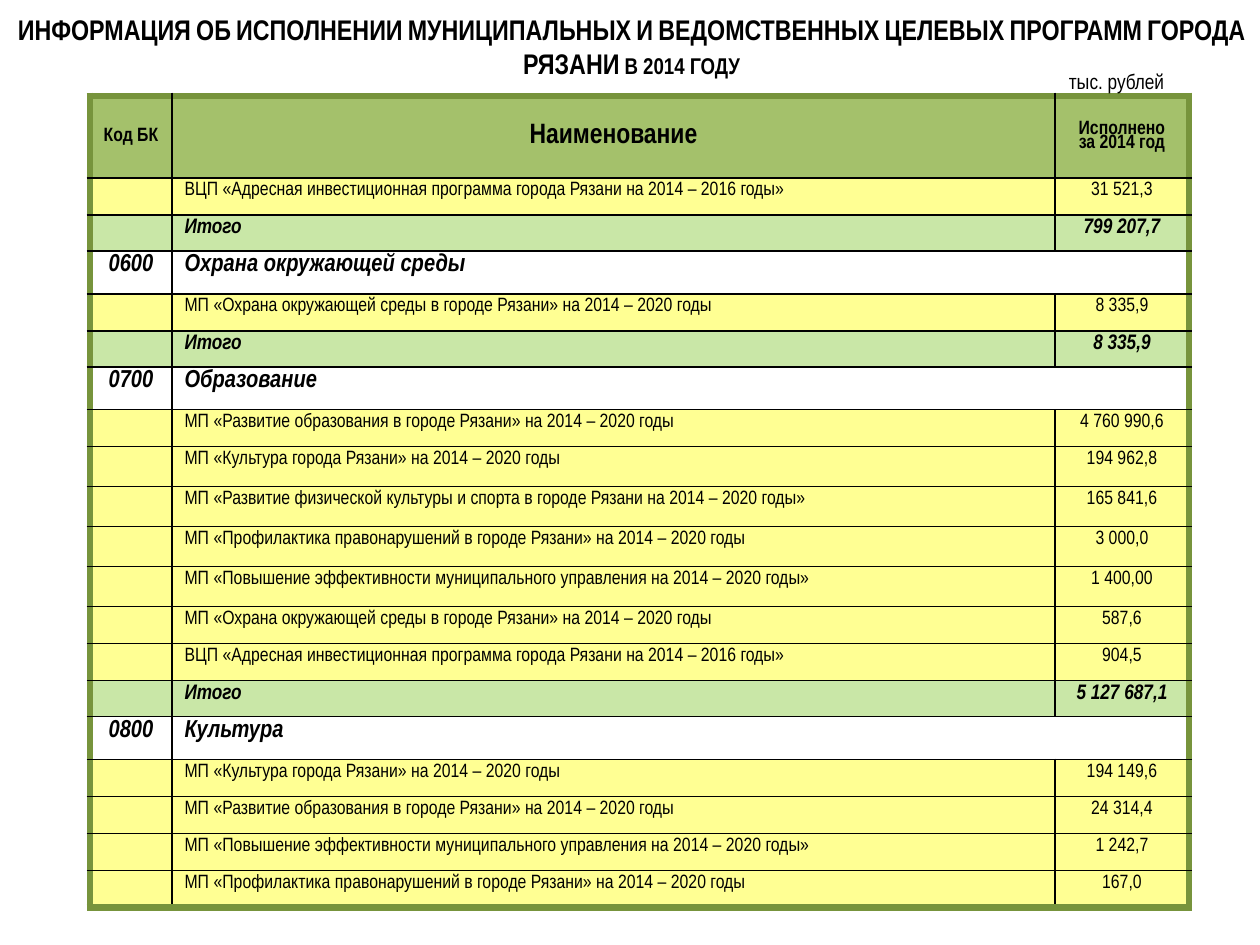
from pptx import Presentation
from pptx.dml.color import RGBColor
from pptx.enum.text import MSO_ANCHOR as Anchor, PP_ALIGN as Align
from pptx.oxml import parse_xml
from pptx.oxml.ns import nsdecls
from pptx.util import Emu, Pt

BLACK, GREEN = "000000", "77943C"
FILLS = {"head": "A4C16B", "program": "FFFF93", "tall": "FFFF93",
         "total": "C9E7A7", "section": "FFFFFF"}
SIZES = {"head": 11, "program": 11, "tall": 11, "total": 12, "section": 14}
HEIGHTS = {"head": 82, "program": 37, "tall": 40, "total": 36, "section": 43}
COLUMNS = (82, 883, 134)

# Programs named in several sections
INVESTMENT = "ВЦП «Адресная инвестиционная программа города Рязани на 2014 – 2016 годы»"
ENVIRONMENT = "МП «Охрана окружающей среды в городе Рязани» на 2014 – 2020 годы"
EDUCATION = "МП «Развитие образования в городе Рязани» на 2014 – 2020 годы"
CULTURE = "МП «Культура города Рязани» на 2014 – 2020 годы"
SAFETY = "МП «Профилактика правонарушений в городе Рязани» на 2014 – 2020 годы"
MANAGEMENT = "МП «Повышение эффективности муниципального управления на 2014 – 2020 годы»"
SPORT = "МП «Развитие физической культуры и спорта в городе Рязани на 2014 – 2020 годы»"

# Row kind, budget code, name, amount
ROWS = [
    ("head", "Код БК", "Наименование", "Исполнено\nза 2014 год"),
    ("program", "", INVESTMENT, "31 521,3"),
    ("total", "", "Итого", "799 207,7"),
    ("section", "0600", "Охрана окружающей среды", ""),
    ("program", "", ENVIRONMENT, "8 335,9"),
    ("total", "", "Итого", "8 335,9"),
    ("section", "0700", "Образование", ""),
    ("program", "", EDUCATION, "4 760 990,6"),
    ("tall", "", CULTURE, "194 962,8"),
    ("tall", "", SPORT, "165 841,6"),
    ("tall", "", SAFETY, "3 000,0"),
    ("tall", "", MANAGEMENT, "1 400,00"),
    ("program", "", ENVIRONMENT, "587,6"),
    ("program", "", INVESTMENT, "904,5"),
    ("total", "", "Итого", "5 127 687,1"),
    ("section", "0800", "Культура", ""),
    ("program", "", CULTURE, "194 149,6"),
    ("program", "", EDUCATION, "24 314,4"),
    ("program", "", MANAGEMENT, "1 242,7"),
    ("program", "", SAFETY, "167,0"),
]


def px(length):
    return Emu(round(length * 914400 / 126))


def color(value):
    return RGBColor.from_string(value)


class SlideBuilder:
    font_name = "Arial Narrow"

    def __init__(self, slide):
        self.slide = slide

    def style(self, paragraph, size, bold=False, italic=False, align=Align.CENTER):
        paragraph.alignment = align
        font = paragraph.font
        font.name, font.size = self.font_name, Pt(size)
        font.bold, font.italic = bold, italic
        font.color.rgb = color(BLACK)
        return font

    def text(self, box, words, size, bold=False, anchor=Anchor.MIDDLE, small_caps=False):
        frame = self.slide.shapes.add_textbox(*map(px, box)).text_frame
        frame.word_wrap = True
        frame.vertical_anchor = anchor
        frame.margin_left = frame.margin_right = 0
        frame.text = words
        font = self.style(frame.paragraphs[0], size, bold)
        if small_caps:
            font._rPr.set("cap", "small")

    def borders(self, cell, outer):
        properties = cell._tc.get_or_add_tcPr()
        for side in "LRTB":
            line, width = (GREEN, Pt(4.5)) if side in outer else (BLACK, Pt(1))
            properties.append(parse_xml(
                f'<a:ln{side} {nsdecls("a")} w="{width}"><a:solidFill>'
                f'<a:srgbClr val="{line}"/></a:solidFill></a:ln{side}>'))

    def cell(self, cell, kind, column, words, outer):
        self.borders(cell, outer)
        cell.fill.solid()
        cell.fill.fore_color.rgb = color(FILLS[kind])
        head = kind == "head"
        cell.vertical_anchor = Anchor.MIDDLE if head else Anchor.TOP
        cell.text = words
        size = 16 if head and column == 1 else SIZES[kind]
        strong = kind in ("total", "section")
        align = Align.LEFT if column == 1 and not head else Align.CENTER
        for paragraph in cell.text_frame.paragraphs:
            paragraph.line_spacing = 0.8
            self.style(paragraph, size if words else 11, head or strong, strong, align)

    def table(self, left, top, rows):
        heights = [HEIGHTS[row[0]] for row in rows]
        table = self.slide.shapes.add_table(
            len(rows), len(COLUMNS), px(left), px(top),
            px(sum(COLUMNS)), px(sum(heights))).table
        table.first_row = table.horz_banding = False
        for column, width in zip(table.columns, COLUMNS):
            column.width = px(width)
        last_row, last_column = len(rows) - 1, len(COLUMNS) - 1
        for r, (kind, *entries) in enumerate(rows):
            table.rows[r].height = px(heights[r])
            # A section name runs on to the right edge
            wide = kind == "section"
            if wide:
                table.cell(r, 1).merge(table.cell(r, last_column))
            for c, words in enumerate(entries):
                outer = "L" if c == 0 else ""
                if c == last_column or (wide and c == 1):
                    outer += "R"
                if r == 0:
                    outer += "T"
                if r == last_row:
                    outer += "B"
                self.cell(table.cell(r, c), kind, c, words, outer)


def main():
    deck = Presentation()
    deck.slide_width, deck.slide_height = px(1260), px(945)
    builder = SlideBuilder(deck.slides.add_slide(deck.slide_layouts[6]))

    # Title
    builder.text((4, 6, 1255, 74),
                 "ИНФОРМАЦИЯ ОБ ИСПОЛНЕНИИ МУНИЦИПАЛЬНЫХ И ВЕДОМСТВЕННЫХ "
                 "ЦЕЛЕВЫХ ПРОГРАММ ГОРОДА РЯЗАНИ в 2014 году",
                 16.2, bold=True, anchor=Anchor.TOP, small_caps=True)

    # Spending table
    builder.table(90, 96, ROWS)

    # Unit of measure
    builder.text((1014, 47, 205, 69), "тыс. рублей", 12)

    deck.save("out.pptx")


if __name__ == "__main__":
    main()
